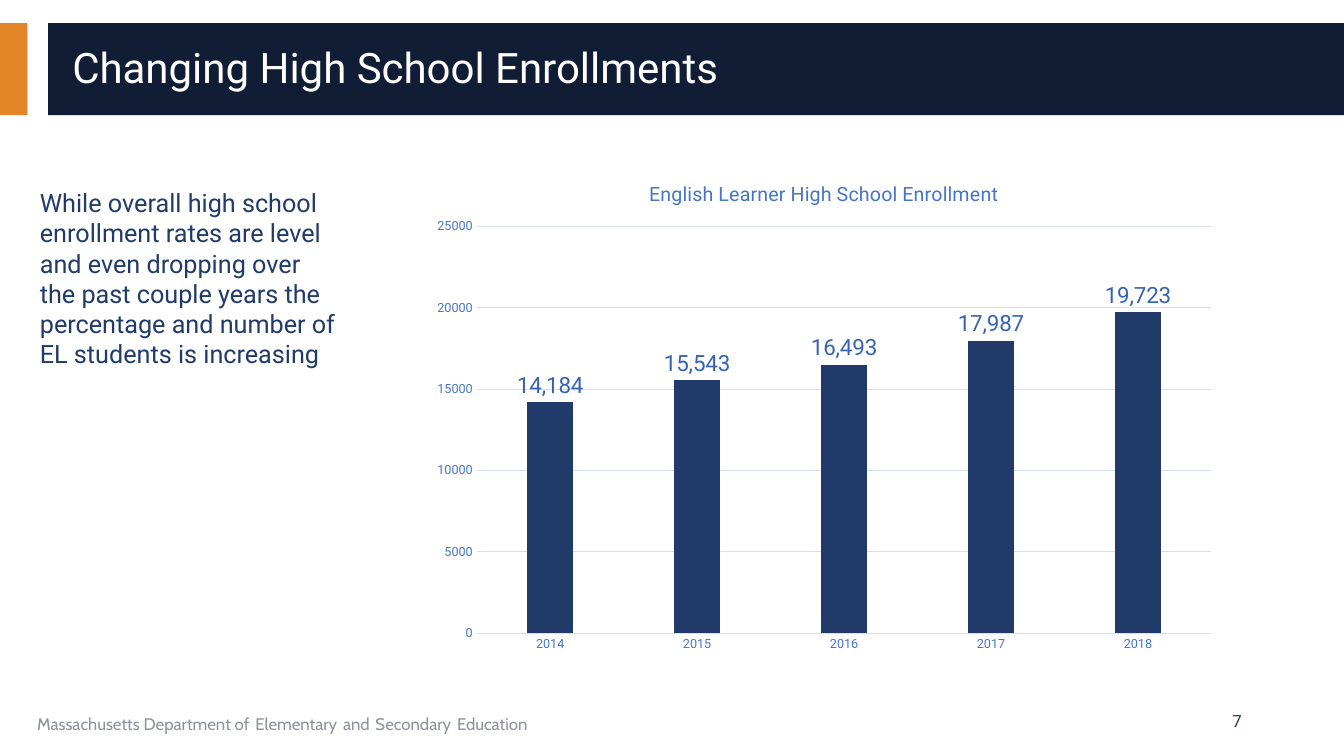
from lxml.etree import fromstring
from pptx import Presentation
from pptx.chart.data import CategoryChartData
from pptx.dml.color import RGBColor
from pptx.enum.chart import XL_CHART_TYPE, XL_LABEL_POSITION, XL_TICK_MARK
from pptx.enum.shapes import MSO_SHAPE
from pptx.enum.text import MSO_ANCHOR, PP_ALIGN
from pptx.util import Pt

NAVY, DARK, ORANGE, WHITE = "203B6A", "101D35", "E38526", "FFFFFF"
GREY, BLUE, LABEL_BLUE, PALE = "8D92A1", "4575C7", "3663B1", "D4DFF2"


def rgb(hex_color):
    return RGBColor.from_string(hex_color)


def add_text(paragraph, text, size, color=NAVY, font="Roboto"):
    """Append one formatted run to the paragraph."""
    run = paragraph.add_run()
    run.text = text
    run.font.size = Pt(size)
    run.font.name = font
    run.font.bold = False
    run.font.color.rgb = rgb(color)


presentation = Presentation()
presentation.slide_width, presentation.slide_height = Pt(960), Pt(540)
slide = presentation.slides.add_slide(presentation.slide_layouts[6])

# Header band
for left, width, color in [(0, 19.6, ORANGE), (34.4, 925.6, DARK)]:
    band = slide.shapes.add_shape(MSO_SHAPE.RECTANGLE, Pt(left), Pt(16.6), Pt(width), Pt(65.6))
    band.shadow.inherit = False
    band.fill.solid()
    band.fill.fore_color.rgb = rgb(color)
    band.line.fill.background()

# Heading, message, footer and page number
paragraphs = {}
for part, left, top, width, height, anchor in [
    ("heading", 44.6, 28, 895.7, 43.2, MSO_ANCHOR.MIDDLE),
    ("message", 21.4, 130.3, 226.8, 138.2, MSO_ANCHOR.TOP),
    ("footer", 19.4, 500.4, 607.7, 28.8, MSO_ANCHOR.MIDDLE),
    ("page", 678.2, 500.4, 216, 28.8, MSO_ANCHOR.MIDDLE),
]:
    frame = slide.shapes.add_textbox(Pt(left), Pt(top), Pt(width), Pt(height)).text_frame
    frame.word_wrap = True
    frame.vertical_anchor = anchor
    paragraphs[part] = frame.paragraphs[0]

paragraphs["heading"].line_spacing = 0.9
add_text(paragraphs["heading"], "Changing High School Enrollments", 30, WHITE)
add_text(
    paragraphs["message"],
    "While overall high school enrollment rates are level and even dropping over "
    "the past couple years the percentage and number of EL students is increasing",
    18,
)
footer_parts = ["Massachusetts Department of", "Elementary", "and", "Secondary", "Education"]
for index, words in enumerate(footer_parts):
    if index:
        add_text(paragraphs["footer"], " ", 18, NAVY, "Cabin")
    add_text(paragraphs["footer"], words, 12, GREY, "Cabin")
paragraphs["page"].alignment = PP_ALIGN.RIGHT
add_text(paragraphs["page"], "7", 12)

# Enrollment chart
enrollment = CategoryChartData(number_format="General")
enrollment.categories = ["2014", "2015", "2016", "2017", "2018"]
enrollment.add_series("Series 1", [14184, 15543, 16493, 17987, 19723])
chart = slide.shapes.add_chart(
    XL_CHART_TYPE.COLUMN_CLUSTERED, Pt(300.2), Pt(115.2), Pt(576.7), Pt(358.6), enrollment
).chart
chart.has_legend = False
chart.font.size = Pt(10)
chart.font.name = "Roboto"
chart.font.color.rgb = rgb(NAVY)
chart.has_title = True
chart.chart_title.include_in_layout = False
add_text(chart.chart_title.text_frame.paragraphs[0],
         "English Learner High School Enrollment", 14, BLUE)

for axis in (chart.category_axis, chart.value_axis):
    axis.major_tick_mark = axis.minor_tick_mark = XL_TICK_MARK.NONE
    axis.tick_labels.font.size = Pt(9)
    axis.tick_labels.font.name = "Roboto"
    axis.tick_labels.font.color.rgb = rgb(BLUE)
years, students = chart.category_axis, chart.value_axis
students.minimum_scale, students.maximum_scale, students.major_unit = 0, 25000, 5000
students.format.line.fill.background()
for line in (years.format.line, students.major_gridlines.format.line):
    line.color.rgb = rgb(PALE)
    line.width = Pt(0.75)

plot = chart.plots[0]
plot.gap_width, plot.overlap, plot.vary_by_categories = 219, -27, False
bars = plot.series[0]
bars.format.fill.solid()
bars.format.fill.fore_color.rgb = rgb(NAVY)
labels = bars.data_labels
labels.show_value = True
labels.number_format, labels.number_format_is_linked = "#,##0", False
labels.position = XL_LABEL_POSITION.OUTSIDE_END
labels.font.size = Pt(16)
labels.font.name = "Roboto"
labels.font.color.rgb = rgb(LABEL_BLUE)

# Fixed plot area, as fractions of the chart
plot_area = chart.element.chart.plotArea
for automatic in plot_area.findall("{*}layout"):
    plot_area.remove(automatic)
plot_area.insert(0, fromstring(
    '<c:layout xmlns:c="http://schemas.openxmlformats.org/drawingml/2006/chart">'
    '<c:manualLayout><c:layoutTarget val="inner"/><c:xMode val="edge"/><c:yMode val="edge"/>'
    '<c:x val="0.07"/><c:y val="0.13"/><c:w val="0.91"/><c:h val="0.81"/>'
    '</c:manualLayout></c:layout>'
))

presentation.save("out.pptx")
